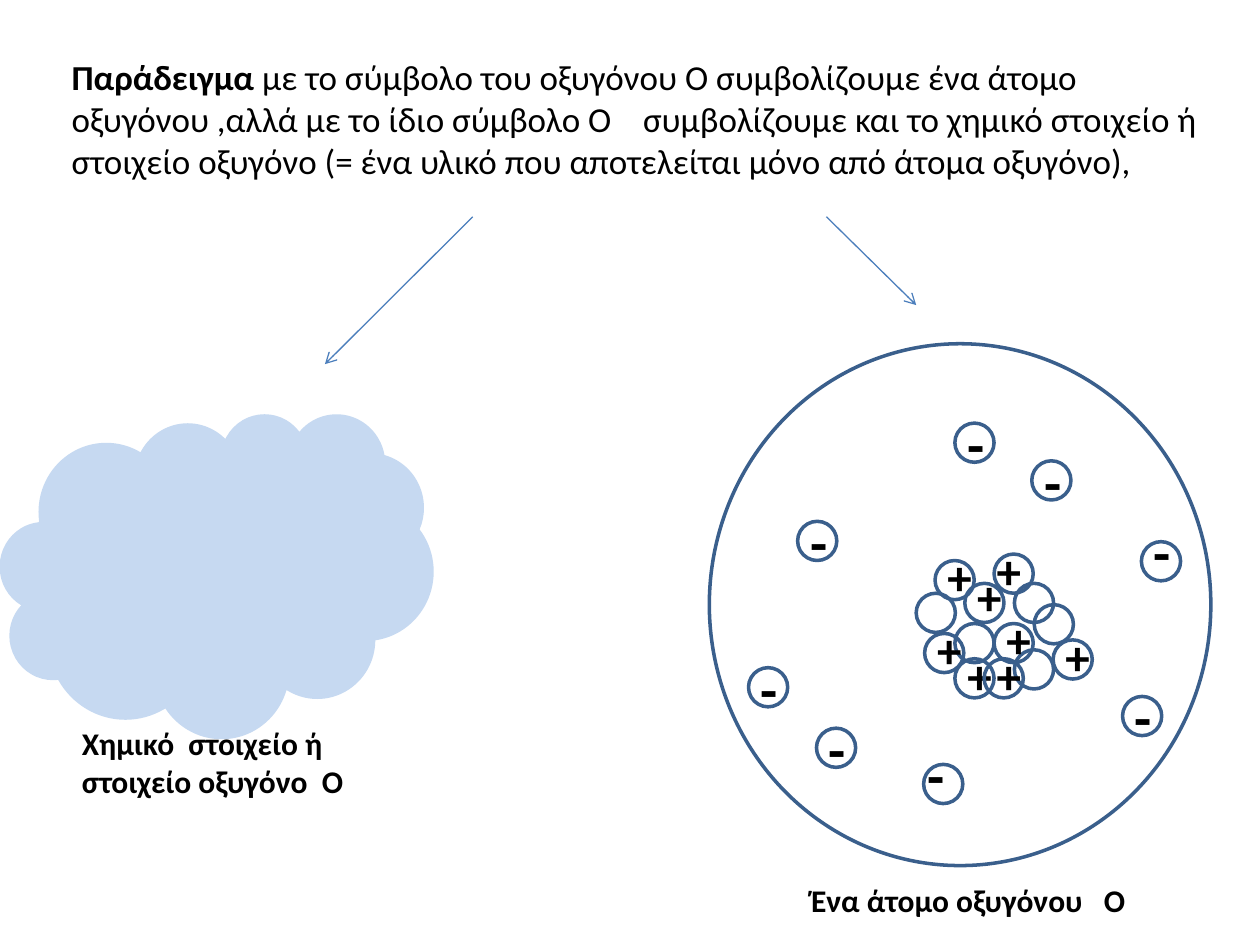
from collections import namedtuple
from dataclasses import dataclass

from lxml.etree import SubElement
from pptx import Presentation
from pptx.dml.color import RGBColor
from pptx.enum.shapes import MSO_CONNECTOR, MSO_SHAPE
from pptx.enum.text import MSO_ANCHOR, MSO_AUTO_SIZE, PP_ALIGN
from pptx.oxml.ns import qn
from pptx.util import Cm, Pt

Box = namedtuple("Box", "left top width height")


@dataclass(frozen=True)
class Theme:
    font: str = "Calibri"
    text: RGBColor = RGBColor(0x00, 0x00, 0x00)
    outline: RGBColor = RGBColor(0x3A, 0x5F, 0x8C)
    arrow: RGBColor = RGBColor(0x4B, 0x7E, 0xBC)
    cloud: RGBColor = RGBColor(0xC6, 0xD9, 0xF1)
    outline_width: float = 2
    arrow_width: float = 0.75
    statement_size: int = 20
    caption_size: int = 18
    plus_size: int = 28
    minus_size: int = 32


THEME = Theme()
PARTICLE = 0.79          # diameter in cm
SIGN_SHIFT = (0, -0.4)   # from a particle's corner to its sign's corner

# Corners in cm from the atom's corner; a shift follows where a sign sits off centre
ELECTRONS = [
    (6.5, 2.36), (1.78, 3.58), (4.95, 1.6), (4.32, 8.48, -0.18, -0.61),
    (0.79, 6.53), (8.33, 7.11), (8.71, 3.99, 0, -0.61), (2.16, 7.75),
]
PROTONS = [
    (5.74, 5.64), (5.74, 4.24, -0.2, -0.4), (5.15, 4.83, 0, -0.46),
    (6.93, 5.97), (4.34, 5.84), (4.55, 4.37), (4.95, 6.35), (5.54, 6.35),
]
NEUTRONS = [(4.95, 5.64), (6.15, 4.83), (4.17, 5.03), (6.55, 5.26), (6.15, 6.17)]


def in_cm(box):
    return [Cm(length) for length in box]


def add_run(paragraph, text, size, bold=True):
    run = paragraph.add_run()
    run.text = text
    run.font.name = THEME.font
    run.font.size = Pt(size)
    run.font.bold = bold
    run.font.color.rgb = THEME.text


def add_label(slide, box, text, size):
    frame = slide.shapes.add_textbox(*in_cm(box)).text_frame
    frame.word_wrap = True
    add_run(frame.paragraphs[0], text, size)


def add_ring(slide, box):
    ring = slide.shapes.add_shape(MSO_SHAPE.OVAL, *in_cm(box))
    ring.shadow.inherit = False
    ring.fill.background()
    ring.line.color.rgb = THEME.outline
    ring.line.width = Pt(THEME.outline_width)


def add_particle(slide, atom, x, y, *shift, sign="", size=0):
    left, top = atom.left + x, atom.top + y
    add_ring(slide, Box(left, top, PARTICLE, PARTICLE))
    if sign:
        dx, dy = shift or SIGN_SHIFT
        add_label(slide, Box(left + dx, top + dy, 0.8, 1.5), sign, size)


def add_statement(slide, box):
    title = slide.shapes.title
    title.left, title.top, title.width, title.height = in_cm(box)
    frame = title.text_frame
    frame.word_wrap = True
    frame.auto_size = MSO_AUTO_SIZE.NONE
    frame.vertical_anchor = MSO_ANCHOR.TOP
    paragraph = frame.paragraphs[0]
    paragraph.alignment = PP_ALIGN.LEFT
    add_run(paragraph, "Παράδειγμα", THEME.statement_size)
    add_run(
        paragraph,
        " με το σύμβολο του οξυγόνου Ο συμβολίζουμε ένα άτομο οξυγόνου ,αλλά "
        "με το ίδιο σύμβολο Ο    συμβολίζουμε και το χημικό στοιχείο ή στοιχείο "
        "οξυγόνο (= ένα υλικό που αποτελείται μόνο από άτομα οξυγόνο),",
        THEME.statement_size, bold=False,
    )


def add_arrow(slide, start, end):
    arrow = slide.shapes.add_connector(
        MSO_CONNECTOR.STRAIGHT, *in_cm(start), *in_cm(end))
    arrow.line.color.rgb = THEME.arrow
    arrow.line.width = Pt(THEME.arrow_width)
    SubElement(arrow.line._get_or_add_ln(), qn("a:tailEnd"), type="arrow")
    SubElement(arrow._element.spPr, qn("a:effectLst"))


def add_element(slide, box):
    cloud = slide.shapes.add_shape(MSO_SHAPE.CLOUD, *in_cm(box))
    cloud.shadow.inherit = False
    cloud.fill.solid()
    cloud.fill.fore_color.rgb = THEME.cloud
    cloud.line.fill.background()
    add_label(slide, Box(box.left + 1.4, box.top + 6.15, 5.94, 1.8),
              "Χημικό  στοιχείο ή στοιχείο οξυγόνο  Ο", THEME.caption_size)


def add_atom(slide, box):
    add_ring(slide, box)
    # Nucleus
    for neutron in NEUTRONS:
        add_particle(slide, box, *neutron)
    for proton in PROTONS:
        add_particle(slide, box, *proton, sign="+", size=THEME.plus_size)
    # Electrons
    for electron in ELECTRONS:
        add_particle(slide, box, *electron, sign="-", size=THEME.minus_size)
    add_label(slide, Box(box.left + 1.8, box.top + 10.7, 9, 1.02),
              "Ένα άτομο οξυγόνου   Ο", THEME.caption_size)


def main():
    deck = Presentation()
    deck.slide_width, deck.slide_height = Cm(25.4), Cm(19.05)
    slide = deck.slides.add_slide(deck.slide_layouts.get_by_name("Title Only"))
    add_statement(slide, Box(1.19, 1, 24.21, 2.82))
    # Two meanings of the symbol
    add_arrow(slide, (9.53, 4.37), (6.55, 7.34))
    add_arrow(slide, (16.66, 4.37), (18.47, 6.15))
    add_element(slide, Box(0, 8.33, 8.74, 6.55))
    add_atom(slide, Box(14.3, 6.93, 10.11, 10.52))
    deck.save("out.pptx")


if __name__ == "__main__":
    main()
